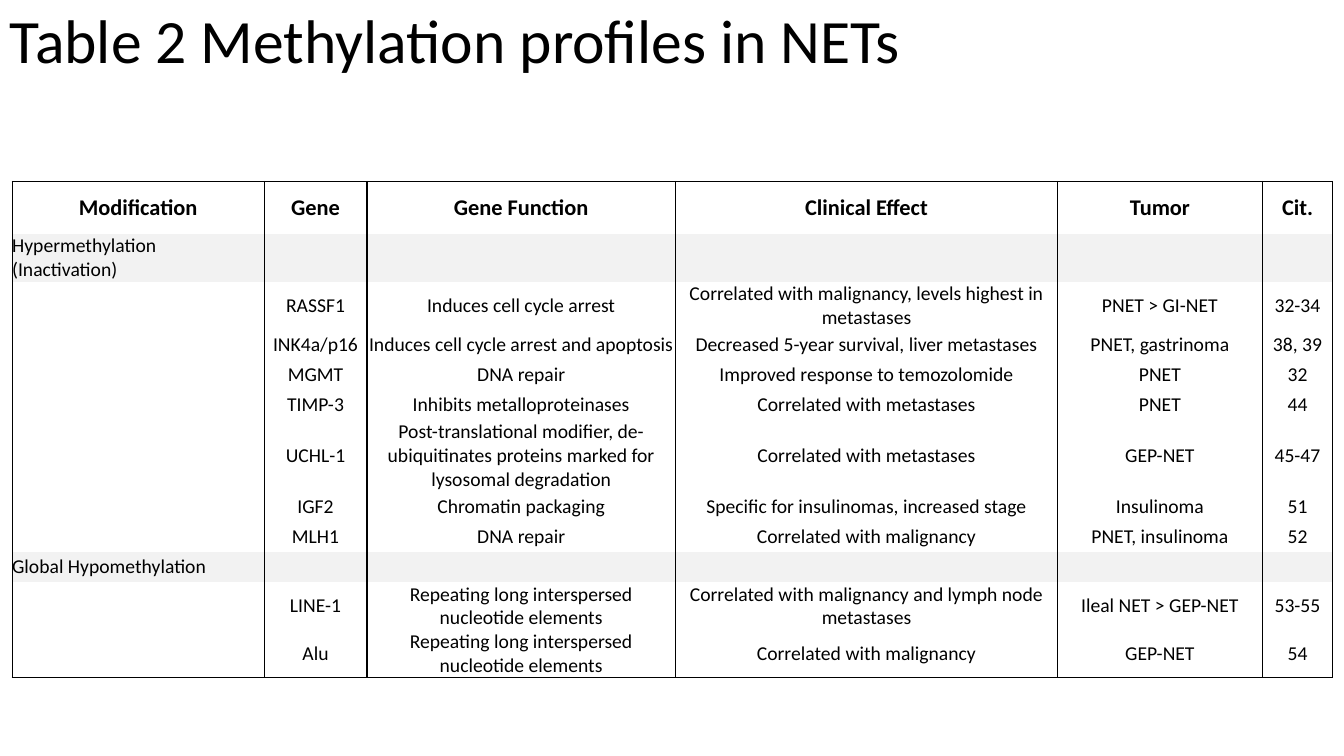
from lxml.etree import SubElement
from pptx import Presentation
from pptx.dml.color import RGBColor
from pptx.enum.text import MSO_ANCHOR, PP_ALIGN
from pptx.oxml.ns import qn
from pptx.util import Inches, Pt

FONT = "Calibri"
BLACK = "000000"
BAND = "F2F2F2"
WIDTHS = [2.5, 1.02, 3.06, 3.79, 2.03, 0.7]
HEAD = ["Modification", "Gene", "Gene Function", "Clinical Effect", "Tumor", "Cit."]
REPEAT = "Repeating long interspersed nucleotide elements"
GROUPS = [
    ("Hypermethylation (Inactivation)", [
        ("RASSF1", "Induces cell cycle arrest",
         "Correlated with malignancy, levels highest in metastases", "PNET > GI-NET", "32-34"),
        ("INK4a/p16", "Induces cell cycle arrest and apoptosis",
         "Decreased 5-year survival, liver metastases", "PNET, gastrinoma", "38, 39"),
        ("MGMT", "DNA repair", "Improved response to temozolomide", "PNET", "32"),
        ("TIMP-3", "Inhibits metalloproteinases", "Correlated with metastases", "PNET", "44"),
        ("UCHL-1",
         "Post-translational modifier, de-ubiquitinates proteins marked for lysosomal degradation",
         "Correlated with metastases", "GEP-NET", "45-47"),
        ("IGF2", "Chromatin packaging", "Specific for insulinomas, increased stage",
         "Insulinoma", "51"),
        ("MLH1", "DNA repair", "Correlated with malignancy", "PNET, insulinoma", "52"),
    ]),
    ("Global Hypomethylation", [
        ("LINE-1", REPEAT, "Correlated with malignancy and lymph node metastases",
         "Ileal NET > GEP-NET", "53-55"),
        ("Alu", REPEAT, "Correlated with malignancy", "GEP-NET", "54"),
    ]),
]


def color(code):
    return RGBColor.from_string(code)


def add_run(par, text, size, bold=False):
    run = par.add_run()
    run.text = text
    font = run.font
    font.name, font.size, font.bold = FONT, Pt(size), bold
    font.color.rgb = color(BLACK)


def add_title(slide, text):
    box = slide.shapes.add_textbox(0, 0, Inches(10.32), Inches(0.86))
    frame = box.text_frame
    frame.word_wrap = True
    frame.vertical_anchor = MSO_ANCHOR.MIDDLE
    par = frame.paragraphs[0]
    par.line_spacing = 0.9
    add_run(par, text, 44)


def set_lines(cell, sides):
    props = cell._tc.get_or_add_tcPr()
    for side in "LRTB":
        line = SubElement(props, qn(f"a:ln{side}"), w=str(Pt(1)))
        if side in sides:
            fill = SubElement(line, qn("a:solidFill"))
            SubElement(fill, qn("a:srgbClr"), val=BLACK)
        else:
            SubElement(line, qn("a:noFill"))


def fill_cell(cell, text, size, bold, align, sides, shade):
    cell.margin_left = cell.margin_right = 0
    cell.margin_top = cell.margin_bottom = 0
    cell.vertical_anchor = MSO_ANCHOR.MIDDLE
    par = cell.text_frame.paragraphs[0]
    par.alignment = align
    if text:
        add_run(par, text, size, bold)
    else:
        SubElement(par._p, qn("a:endParaRPr"), sz=str(size * 100))
    set_lines(cell, sides)
    if shade:
        cell.fill.solid()
        cell.fill.fore_color.rgb = color(BAND)
    else:
        cell.fill.background()


def list_rows():
    rows = [HEAD]
    for name, genes in GROUPS:
        rows.append([name] + [""] * (len(HEAD) - 1))
        rows += [["", *gene] for gene in genes]
    return rows


def add_grid(slide, rows):
    last = len(rows) - 1
    frame = slide.shapes.add_table(len(rows), len(HEAD), Inches(0.12), Inches(1.8),
                                   Inches(sum(WIDTHS)), Inches(0.52 + 0.3 * last))
    table = frame.table
    table.first_row = table.horz_banding = False
    for col, width in zip(table.columns, WIDTHS):
        col.width = Inches(width)
    for r, row in enumerate(rows):
        top = r == 0
        shade = not top and bool(row[0])
        table.rows[r].height = Inches(0.52 if top else 0.3)
        sides = "LR" + ("T" if top else "") + ("B" if r == last else "")
        for c, text in enumerate(row):
            align = PP_ALIGN.LEFT if shade else PP_ALIGN.CENTER
            fill_cell(table.cell(r, c), text, 16 if top else 14, top, align, sides, shade)


def main():
    deck = Presentation()
    deck.slide_width, deck.slide_height = Inches(13.33), Inches(7.5)
    slide = deck.slides.add_slide(deck.slide_layouts[6])
    add_grid(slide, list_rows())
    add_title(slide, "Table 2 Methylation profiles in NETs")
    deck.save("out.pptx")


if __name__ == "__main__":
    main()
